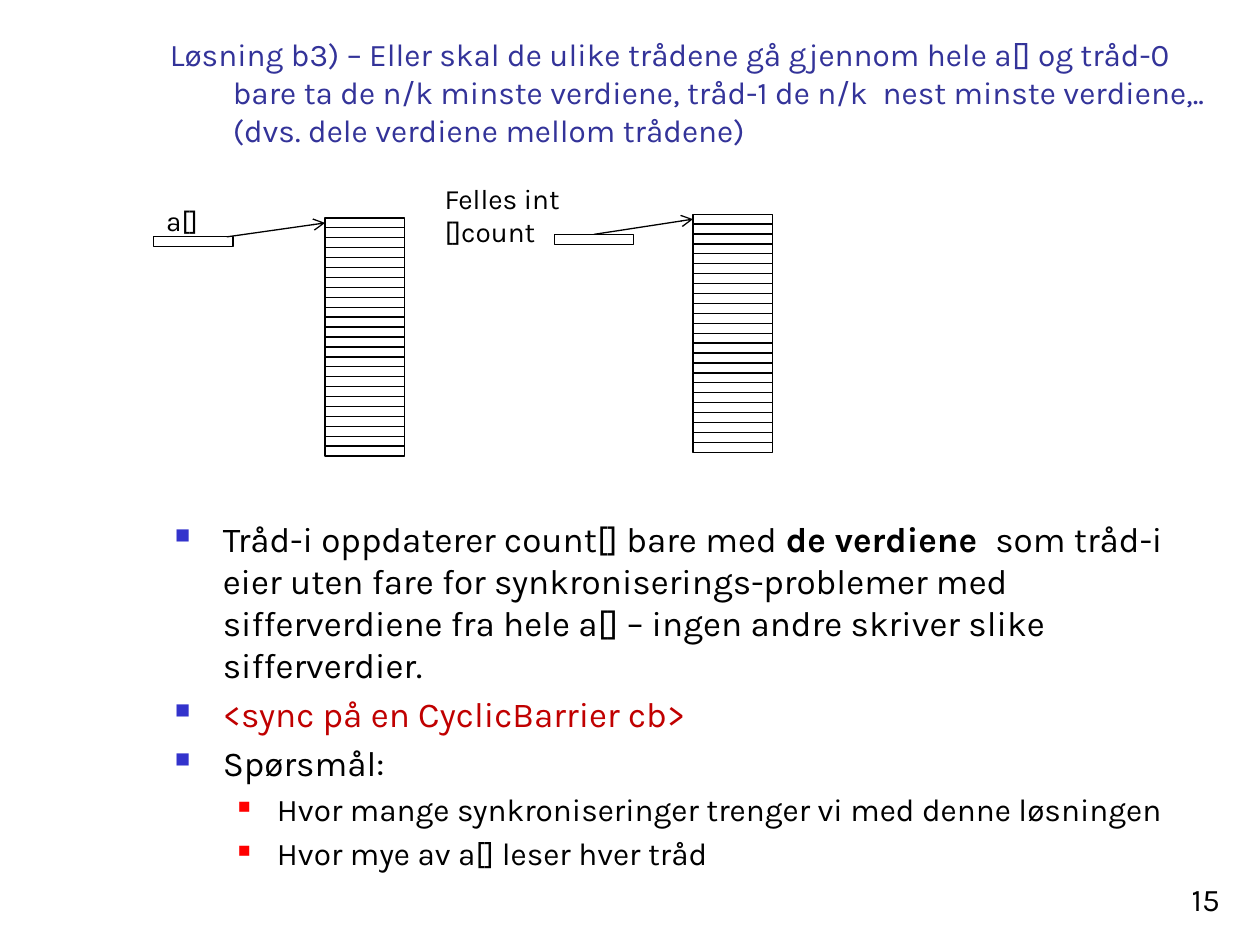
import pptx
import pptx.util
import pptx.dml.color
import pptx.enum.shapes
import pptx.enum.text
import pptx.oxml
from dataclasses import dataclass
from lxml import etree

Inches = pptx.util.Inches
Anchor = pptx.enum.text.MSO_ANCHOR
Align = pptx.enum.text.PP_ALIGN


@dataclass(frozen=True)
class Theme:
    font: str = "Karla"
    title: str = "333399"
    ink: str = "000000"
    alert: str = "C00000"
    bullets: tuple = ("3333CC", "FF0000")
    bullet_percent: tuple = (60, 55)
    body_sizes: tuple = (20, 18)
    title_size: int = 18
    label_size: int = 16
    number_size: int = 18
    line_width: float = 0.75


THEME = Theme()

TITLE = (
    "Løsning b3) – Eller skal de ulike trådene gå gjennom hele a[] og tråd-0 "
    "bare ta de n/k minste verdiene, tråd-1 de n/k  nest minste verdiene,..\v"
    "(dvs. dele verdiene mellom trådene)"
)
POINTS = [
    (0, THEME.ink, [
        ("Tråd-i oppdaterer count[] bare med ", False),
        ("de verdiene  ", True),
        ("som tråd-i eier uten fare for synkroniserings-problemer med "
         "sifferverdiene fra hele a[] – ingen andre skriver slike sifferverdier.", False),
    ]),
    (0, THEME.alert, [("<sync på en CyclicBarrier cb>", False)]),
    (0, THEME.ink, [("Spørsmål:", False)]),
    (1, THEME.ink, [("Hvor mange synkroniseringer trenger vi med denne løsningen", False)]),
    (1, THEME.ink, [("Hvor mye av a[] leser hver tråd", False)]),
]
INDENTS = [(0.38, -0.38), (0.81, -0.31)]
PAGE_NUMBER = "15"

ARRAYS = [
    {"label": "a[]", "label_at": (1.22, 1.57, 0.49, 0.37), "wrap": False,
     "pointer": (1.22, 1.88), "arrow_start": (1.8, 1.88), "column": (2.58, 1.73)},
    {"label": "Felles int []count", "label_at": (3.43, 1.39, 1.8, 0.37), "wrap": True,
     "pointer": (4.4, 1.86), "arrow_start": None, "column": (5.5, 1.7)},
]
CELL_COUNT = 24
CELL_WIDTH = 0.63
CELL_HEIGHT = 1.89 / CELL_COUNT


def color(value):
    return pptx.dml.color.RGBColor.from_string(value)


def style(font, size, value, bold=False):
    font.name = THEME.font
    font.size = pptx.util.Pt(size)
    font.color.rgb = color(value)
    font.bold = bold


def add_box(page, at, anchor=Anchor.TOP, wrap=True):
    box = page.shapes.add_textbox(*map(Inches, at))
    box.text_frame.word_wrap = wrap
    box.text_frame.vertical_anchor = anchor
    return box


def add_text(page, at, text, size, value, **options):
    box = add_box(page, at, **options)
    box.text_frame.text = text
    para = box.text_frame.paragraphs[0]
    for span in para.runs:
        style(span.font, size, value)
    return box


def set_indent(para, left, first):
    properties = para._p.get_or_add_pPr()
    properties.set("marL", str(Inches(left)))
    properties.set("indent", str(Inches(first)))
    return properties


def add_bullet(properties, level):
    tint = etree.SubElement(properties, pptx.oxml.ns.qn("a:buClr"))
    etree.SubElement(tint, pptx.oxml.ns.qn("a:srgbClr"), val=THEME.bullets[level])
    etree.SubElement(properties, pptx.oxml.ns.qn("a:buSzPct"),
                     val=str(THEME.bullet_percent[level] * 1000))
    etree.SubElement(properties, pptx.oxml.ns.qn("a:buChar"), char="■")


def add_points(page):
    frame = add_box(page, (1.29, 4.06, 8.5, 2.64)).text_frame
    for index, (level, value, spans) in enumerate(POINTS):
        para = frame.add_paragraph() if index else frame.paragraphs[0]
        para.level = level
        add_bullet(set_indent(para, *INDENTS[level]), level)
        size = THEME.body_sizes[level]
        if index:
            para.space_before = pptx.util.Pt(size * 0.2)
        for text, bold in spans:
            span = para.add_run()
            span.text = text
            style(span.font, size, value, bold)


def add_cell(page, left, top):
    cell = page.shapes.add_shape(
        pptx.enum.shapes.MSO_SHAPE.RECTANGLE,
        *map(Inches, (left, top, CELL_WIDTH, CELL_HEIGHT)))
    cell.shadow.inherit = False
    cell.fill.background()
    cell.line.color.rgb = color(THEME.ink)
    cell.line.width = pptx.util.Pt(THEME.line_width)
    return cell


def add_arrow(page, pointer, start, target):
    begin = map(Inches, start or (0, 0))
    arrow = page.shapes.add_connector(
        pptx.enum.shapes.MSO_CONNECTOR.STRAIGHT, *begin, target.left, target.top)
    if start is None:
        arrow.begin_connect(pointer, 0)
    arrow.end_connect(target, 1)
    arrow.line.color.rgb = color(THEME.ink)
    arrow.line.width = pptx.util.Pt(THEME.line_width)
    etree.SubElement(arrow.line._get_or_add_ln(), pptx.oxml.ns.qn("a:tailEnd"), type="arrow")
    etree.SubElement(arrow._element.spPr, pptx.oxml.ns.qn("a:effectLst"))


def add_array(page, array):
    pointer = add_cell(page, *array["pointer"])
    label = add_text(page, array["label_at"], array["label"],
                     THEME.label_size, THEME.ink, wrap=array["wrap"])
    label.text_frame.auto_size = pptx.enum.text.MSO_AUTO_SIZE.SHAPE_TO_FIT_TEXT
    left, top = array["column"]
    cells = [add_cell(page, left, top + row * CELL_HEIGHT) for row in range(CELL_COUNT)]
    add_arrow(page, pointer, array["arrow_start"], cells[0])


def main():
    deck = pptx.Presentation()
    deck.slide_width, deck.slide_height = Inches(10), Inches(7.5)
    page = deck.slides.add_slide(deck.slide_layouts[6])

    title = add_text(page, (0.75, 0.63, 9.06, 0.6), TITLE,
                     THEME.title_size, THEME.title, anchor=Anchor.BOTTOM)
    set_indent(title.text_frame.paragraphs[0], 1, -0.5)
    add_points(page)
    number = add_text(page, (7.7, 6.83, 2.08, 0.5), PAGE_NUMBER,
                      THEME.number_size, THEME.ink, anchor=Anchor.BOTTOM)
    number.text_frame.paragraphs[0].alignment = Align.RIGHT
    for array in ARRAYS:
        add_array(page, array)

    deck.save("out.pptx")


if __name__ == "__main__":
    main()
